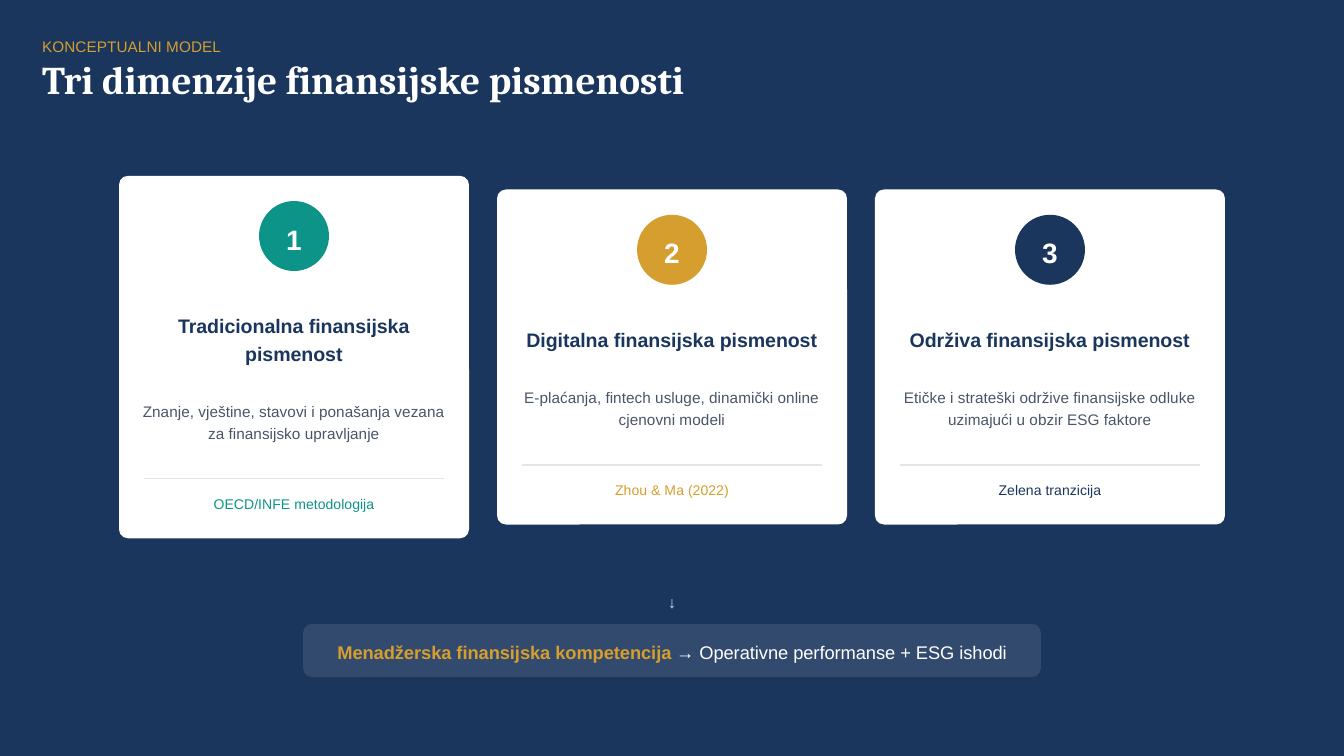
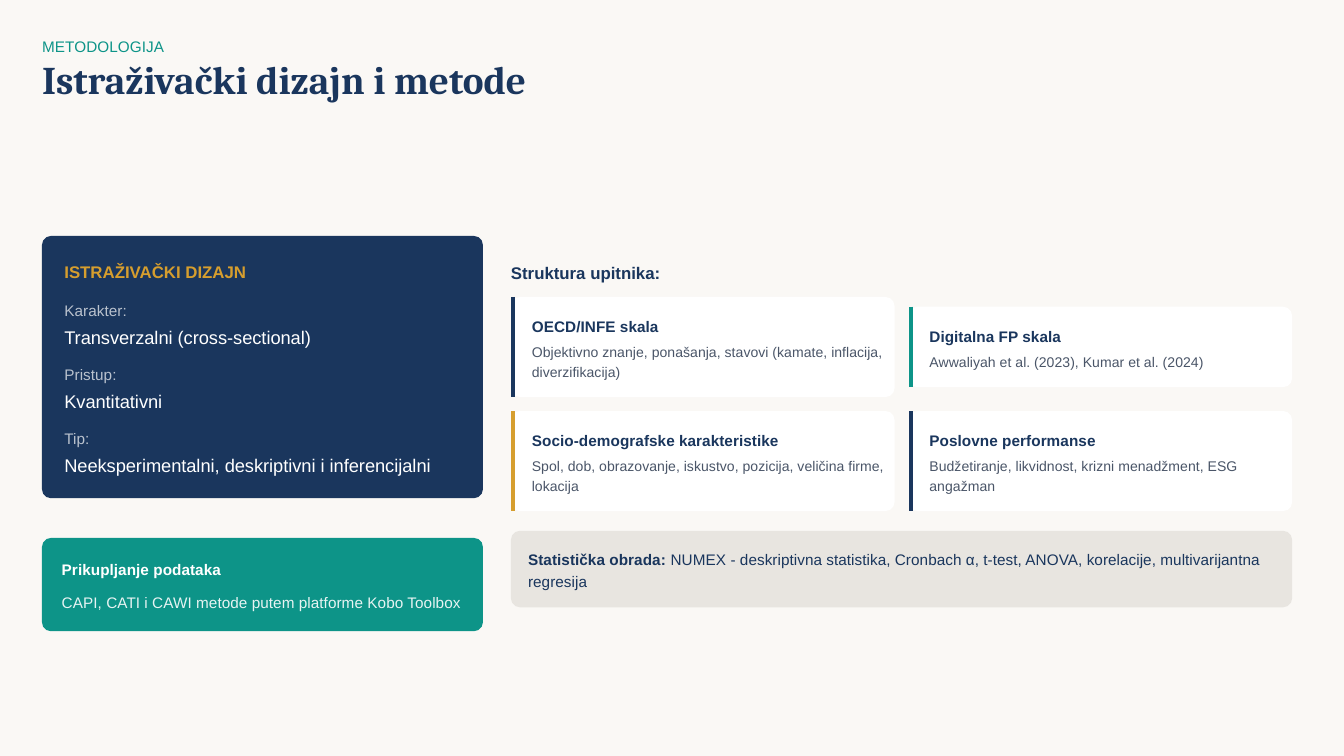
"""Builds two slides on financial literacy: the conceptual model and the research methods."""
from lxml import etree
from pptx import Presentation
from pptx import util as u
from pptx.dml.color import RGBColor
from pptx.enum import shapes, text
from pptx.oxml import ns

NAVY, TEAL, GOLD = "1A365D", "0D9488", "D69E2E"
WHITE, CREAM, SAND, GREY = "FFFFFF", "FAF8F5", "E8E5E0", "4A5568"
LEFT, CENTER = text.PP_ALIGN.LEFT, text.PP_ALIGN.CENTER
ROUNDED, OVAL = shapes.MSO_SHAPE.ROUNDED_RECTANGLE, shapes.MSO_SHAPE.OVAL
RADIUS, LINE_RATIO = 4.8, 1.4


def paint(fill, color, opacity=100):
    fill.solid()
    fill.fore_color.rgb = RGBColor.from_string(color)
    if opacity < 100:
        alpha = etree.SubElement(fill.fore_color._xFill[0], ns.qn("a:alpha"))
        alpha.set("val", str(opacity * 1000))


def add_box(page, place, paragraphs, align=LEFT, color=None, opacity=100, kind=ROUNDED, inset=0):
    """Add a text box, or a filled shape when a colour is given.

    Each paragraph is (size, space before, spans); a span is (text, colour, bold, opacity).
    """
    left, top, width, height = [u.Pt(value) for value in place]
    if color:
        box = page.shapes.add_shape(kind, left, top, width, height)
        box.shadow.inherit = False
        box.line.fill.background()
        paint(box.fill, color, opacity)
        if kind == ROUNDED:
            box.adjustments[0] = RADIUS / min(place[2:])
    else:
        box = page.shapes.add_textbox(left, top, width, height)
    frame = box.text_frame
    frame.word_wrap = True
    frame.vertical_anchor = text.MSO_ANCHOR.MIDDLE if color else text.MSO_ANCHOR.TOP
    frame.margin_left = u.Pt(inset)
    frame.margin_top = frame.margin_right = frame.margin_bottom = 0
    for index, (size, before, spans) in enumerate(paragraphs):
        para = frame.add_paragraph() if index else frame.paragraphs[0]
        para.alignment = align
        para.line_spacing = u.Pt(size * LINE_RATIO)
        if before:
            para.space_before = u.Pt(before)
        for words, ink, bold, strength in spans:
            span = para.add_run()
            span.text = words
            span.font.name = "Arial"
            span.font.size = u.Pt(size)
            span.font.bold = bold
            paint(span.font.fill, ink, strength)


deck = Presentation()
deck.slide_width, deck.slide_height = u.Pt(720), u.Pt(405)

headers = [
    (NAVY, "KONCEPTUALNI MODEL", GOLD, "Tri dimenzije finansijske pismenosti", WHITE),
    (CREAM, "METODOLOGIJA", TEAL, "Istraživački dizajn i metode", NAVY),
]
for background, topic, topic_color, heading, heading_color in headers:
    page = deck.slides.add_slide(deck.slide_layouts[5])
    paint(page.background.fill, background)
    add_box(page, (22.5, 18, 688, 11.6), [(8.25, 0, [(topic, topic_color, False, 100)])])
    title = page.shapes.title
    title.left, title.top, title.width, title.height = u.Pt(22.5), u.Pt(33.8), u.Pt(345), u.Pt(21)
    frame = title.text_frame
    frame.text = heading
    frame.word_wrap = False
    frame.auto_size = text.MSO_AUTO_SIZE.NONE
    frame.vertical_anchor = text.MSO_ANCHOR.TOP
    frame.margin_left = frame.margin_top = frame.margin_right = frame.margin_bottom = 0
    para = frame.paragraphs[0]
    para.alignment = LEFT
    para.line_spacing = u.Pt(21)
    font = para.runs[0].font
    font.name, font.size, font.bold = "Cambria", u.Pt(21), True
    paint(font.fill, heading_color)

model, methods = deck.slides
rules = []

dimensions = [
    ("Tradicionalna finansijska pismenost",
     "Znanje, vještine, stavovi i ponašanja vezana za finansijsko upravljanje",
     "OECD/INFE metodologija", TEAL, 194.2),
    ("Digitalna finansijska pismenost",
     "E-plaćanja, fintech usluge, dinamički online cjenovni modeli",
     "Zhou & Ma (2022)", GOLD, 179.5),
    ("Održiva finansijska pismenost",
     "Etičke i strateški održive finansijske odluke uzimajući u obzir ESG faktore",
     "Zelena tranzicija", NAVY, 179.5),
]
for index, (name, description, source, accent, height) in enumerate(dimensions):
    left = 63.75 + index * 202.5
    top = 191.3 - height / 2
    bottom = top + height
    add_box(model, (left, top, 187.5, height), [], color=WHITE)
    add_box(model, (left + 75, top + 13.5, 37.5, 37.5),
            [(15, 0, [(str(index + 1), WHITE, True, 100)])], CENTER, accent, kind=OVAL)
    card_texts = [
        (top + 72, height - 164.8, 10.5, name, NAVY, True),
        (bottom - 74.6, 23.2, 8.25, description, GREY, False),
        (bottom - 24.4, 10.5, 7.5, source, accent, False),
    ]
    for text_top, text_height, size, words, ink, bold in card_texts:
        add_box(model, (left + 12, text_top, 163.5, text_height),
                [(size, 0, [(words, ink, bold, 100)])], CENTER)
    rules.append((model, left + 13.5, bottom - 32, left + 174, bottom - 32, SAND, 0.75))

add_box(model, (158.5, 315.4, 403, 12.6), [(9, 0, [("↓", WHITE, False, 80)])], CENTER)
add_box(model, (162.4, 334.2, 395.25, 28.5),
        [(9.75, 0, [("Menadžerska finansijska kompetencija", GOLD, True, 100),
                    (" → Operativne performanse + ESG ishodi", WHITE, False, 100)])],
        CENTER, WHITE, 10)

design = [(9, 0, [("ISTRAŽIVAČKI DIZAJN", GOLD, True, 100)])]
traits = [
    ("Karakter:", "Transverzalni (cross-sectional)"),
    ("Pristup:", "Kvantitativni"),
    ("Tip:", "Neeksperimentalni, deskriptivni i inferencijalni"),
]
for index, (label, value) in enumerate(traits):
    design.append((8.25, 7.5 if index else 9, [(label, WHITE, False, 70)]))
    design.append((9.75, 1.5, [(value, WHITE, False, 100)]))
add_box(methods, (22.5, 126.4, 236.25, 140.5), design, color=NAVY, inset=10.6)
add_box(methods, (22.5, 288.2, 236.25, 50),
        [(8.25, 0, [("Prikupljanje podataka", WHITE, True, 100)]),
         (8.25, 6, [("CAPI, CATI i CAWI metode putem platforme Kobo Toolbox", WHITE, False, 90)])],
        color=TEAL, inset=9.2)

add_box(methods, (273.75, 139, 427, 12.6),
        [(9, 0, [("Struktura upitnika:", NAVY, True, 100)])])
scales = [
    ("OECD/INFE skala",
     "Objektivno znanje, ponašanja, stavovi (kamate, inflacija, diverzifikacija)", NAVY, 53.6),
    ("Digitalna FP skala", "Awwaliyah et al. (2023), Kumar et al. (2024)", TEAL, 43.1),
    ("Socio-demografske karakteristike",
     "Spol, dob, obrazovanje, iskustvo, pozicija, veličina firme, lokacija", GOLD, 53.6),
    ("Poslovne performanse",
     "Budžetiranje, likvidnost, krizni menadžment, ESG angažman", NAVY, 53.6),
]
for index, (name, detail, accent, height) in enumerate(scales):
    row, column = divmod(index, 2)
    left = 273.75 + column * 213
    top = 185.9 + row * 61.1 - height / 2
    add_box(methods, (left, top, 205.5, height),
            [(8.25, 0, [(name, NAVY, True, 100)]), (7.5, 3, [(detail, GREY, False, 100)])],
            color=WHITE, inset=9.8)
    rules.append((methods, left + 1.1, top, left + 1.1, top + height, accent, 2.25))

add_box(methods, (273.75, 284.4, 418.5, 41),
        [(8.25, 0, [("Statistička obrada:", NAVY, True, 100),
                    (" NUMEX - deskriptivna statistika, Cronbach α, t-test, ANOVA, korelacije, "
                     "multivarijantna regresija", NAVY, False, 100)])],
        color=SAND, inset=7.8)

for page, *ends, color, width in rules:
    rule = page.shapes.add_connector(shapes.MSO_CONNECTOR.STRAIGHT, *[u.Pt(end) for end in ends])
    rule.line.width = u.Pt(width)
    paint(rule.line.fill, color)
    etree.SubElement(rule._element.spPr, ns.qn("a:effectLst"))

deck.save("out.pptx")
